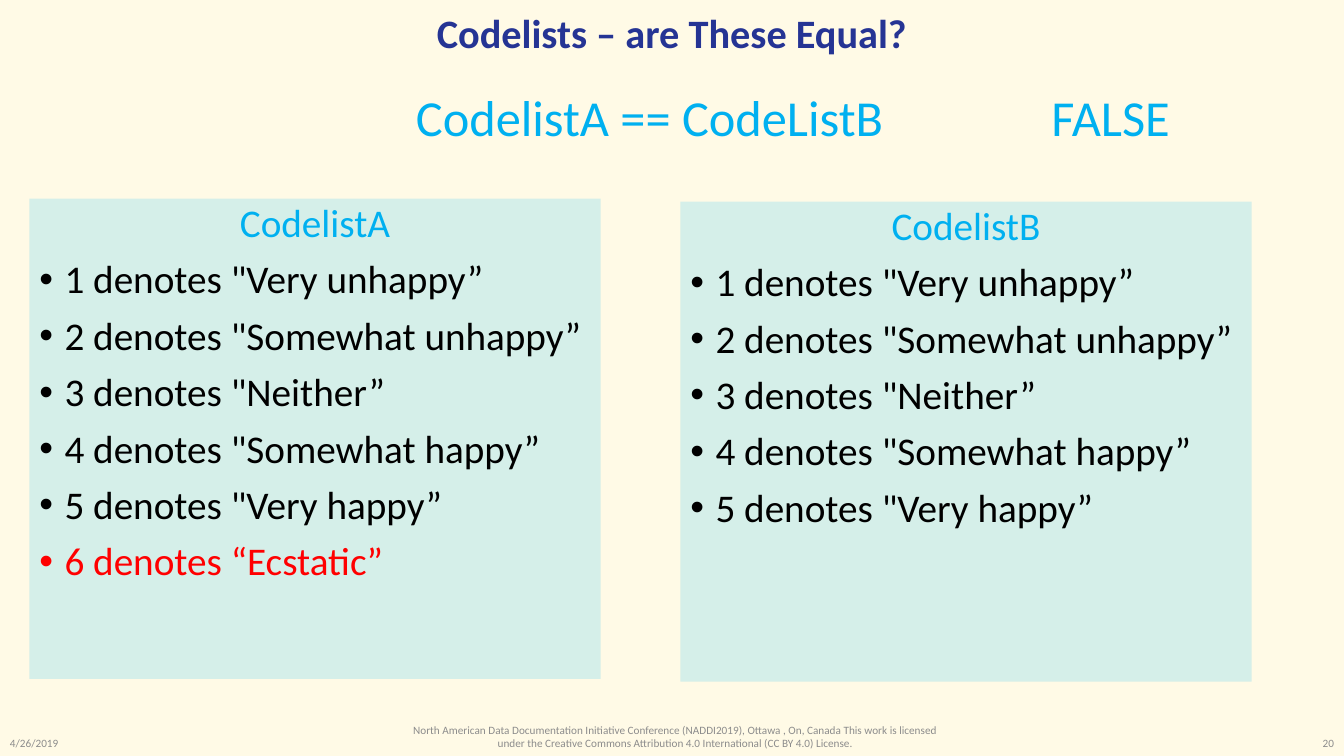
"""Build a slide that compares two codelists."""
from lxml import etree
from pptx import Presentation
from pptx.dml.color import RGBColor
from pptx.enum import shapes, text
from pptx.oxml.ns import qn
from pptx.util import Pt

CREAM = RGBColor(0xFF, 0xFA, 0xE6)
MINT = RGBColor(0xD5, 0xEF, 0xE9)
NAVY = RGBColor(0x25, 0x34, 0x94)
SKY = RGBColor(0x00, 0xB0, 0xF0)
BLACK = RGBColor(0x00, 0x00, 0x00)
RED = RGBColor(0xFF, 0x00, 0x00)
GRAY = RGBColor(0x8C, 0x8C, 0x8C)

FONT = "Calibri"
LEFT, CENTER, RIGHT = text.PP_ALIGN.LEFT, text.PP_ALIGN.CENTER, text.PP_ALIGN.RIGHT
TOP, MIDDLE = text.MSO_ANCHOR.TOP, text.MSO_ANCHOR.MIDDLE

SLIDE_WIDTH, SLIDE_HEIGHT = 960, 540
PANEL_WIDTH, PANEL_HEIGHT = 408, 343
BULLET_INDENT = 18
SHARED_CODES = [
    '1 denotes "Very unhappy”',
    '2 denotes "Somewhat unhappy”',
    '3 denotes "Neither”',
    '4 denotes "Somewhat happy”',
    '5 denotes "Very happy”',
]
EXTRA_CODE = "6 denotes “Ecstatic”"
CREDIT = (
    "North American Data Documentation Initiative Conference (NADDI2019), "
    "Ottawa , On, Canada This work is licensed under the Creative Commons "
    "Attribution 4.0 International (CC BY 4.0) License."
)


def style(para, size, color, align=LEFT, bold=False):
    para.alignment = align
    para.font.name = FONT
    para.font.size = Pt(size)
    para.font.bold = bold
    para.font.color.rgb = color


def add_label(page, box, words, size, color, align=LEFT, anchor=MIDDLE, bold=False, wrap=True):
    label = page.shapes.add_textbox(*map(Pt, box))
    frame = label.text_frame
    frame.word_wrap = wrap
    frame.vertical_anchor = anchor
    para = frame.paragraphs[0]
    para.text = words
    style(para, size, color, align, bold)
    return para


def add_bullet(para):
    properties = para._p.get_or_add_pPr()
    properties.set("marL", str(Pt(BULLET_INDENT)))
    properties.set("indent", str(-Pt(BULLET_INDENT)))
    etree.SubElement(properties, qn("a:buFont")).set("typeface", "Arial")
    etree.SubElement(properties, qn("a:buChar")).set("char", "•")


def add_heading(page, left, top, width, height):
    title = add_label(page, (left, top, width, height), "Codelists – are These Equal?",
                      28.8, NAVY, CENTER, bold=True)
    title.line_spacing = 0.9


def add_comparison(page, left, top, width, height):
    result_width = 100
    for words, offset, label_width in (
        ("CodelistA == CodeListB", 0, 351),
        ("FALSE", width - result_width, result_width),
    ):
        add_label(page, (left + offset, top, label_width, height), words, 36, SKY,
                  anchor=TOP, wrap=False)


def add_codelist(page, left, top, name, codes):
    panel = page.shapes.add_shape(shapes.MSO_SHAPE.RECTANGLE, Pt(left), Pt(top),
                                  Pt(PANEL_WIDTH), Pt(PANEL_HEIGHT))
    panel.shadow.inherit = False
    panel.fill.solid()
    panel.fill.fore_color.rgb = MINT
    panel.line.fill.background()
    frame = panel.text_frame
    frame.word_wrap = True
    frame.vertical_anchor = TOP
    frame.text = "\n".join([name, *codes])
    for index, para in enumerate(frame.paragraphs):
        para.line_spacing = 0.9
        para.space_before = Pt(10)
        if index == 0:
            style(para, 28, SKY, CENTER)
        else:
            style(para, 28, RED if para.text == EXTRA_CODE else BLACK)
            add_bullet(para)


def add_footer(page, left, bottom, width):
    side_width, side_height = 216, 19
    side_top = bottom - side_height
    add_label(page, (left, side_top, side_width, side_height), "4/26/2019", 8, GRAY)
    add_label(page, (left + 279, bottom - 28, 407, 28), CREDIT, 8, GRAY, CENTER)
    add_label(page, (left + width - side_width, side_top, side_width, side_height),
              "20", 8, GRAY, RIGHT)


def main():
    deck = Presentation()
    deck.slide_width, deck.slide_height = Pt(SLIDE_WIDTH), Pt(SLIDE_HEIGHT)
    page = deck.slides.add_slide(deck.slide_layouts[6])
    page.background.fill.solid()
    page.background.fill.fore_color.rgb = CREAM
    add_heading(page, 66, 5, 828, 41)
    add_codelist(page, 21, 142, "CodelistA", SHARED_CODES + [EXTRA_CODE])
    add_codelist(page, 486, 144, "CodelistB", SHARED_CODES)
    add_footer(page, 0, SLIDE_HEIGHT, SLIDE_WIDTH)
    add_comparison(page, 290, 58, 554, 51)
    deck.save("out.pptx")


if __name__ == "__main__":
    main()
